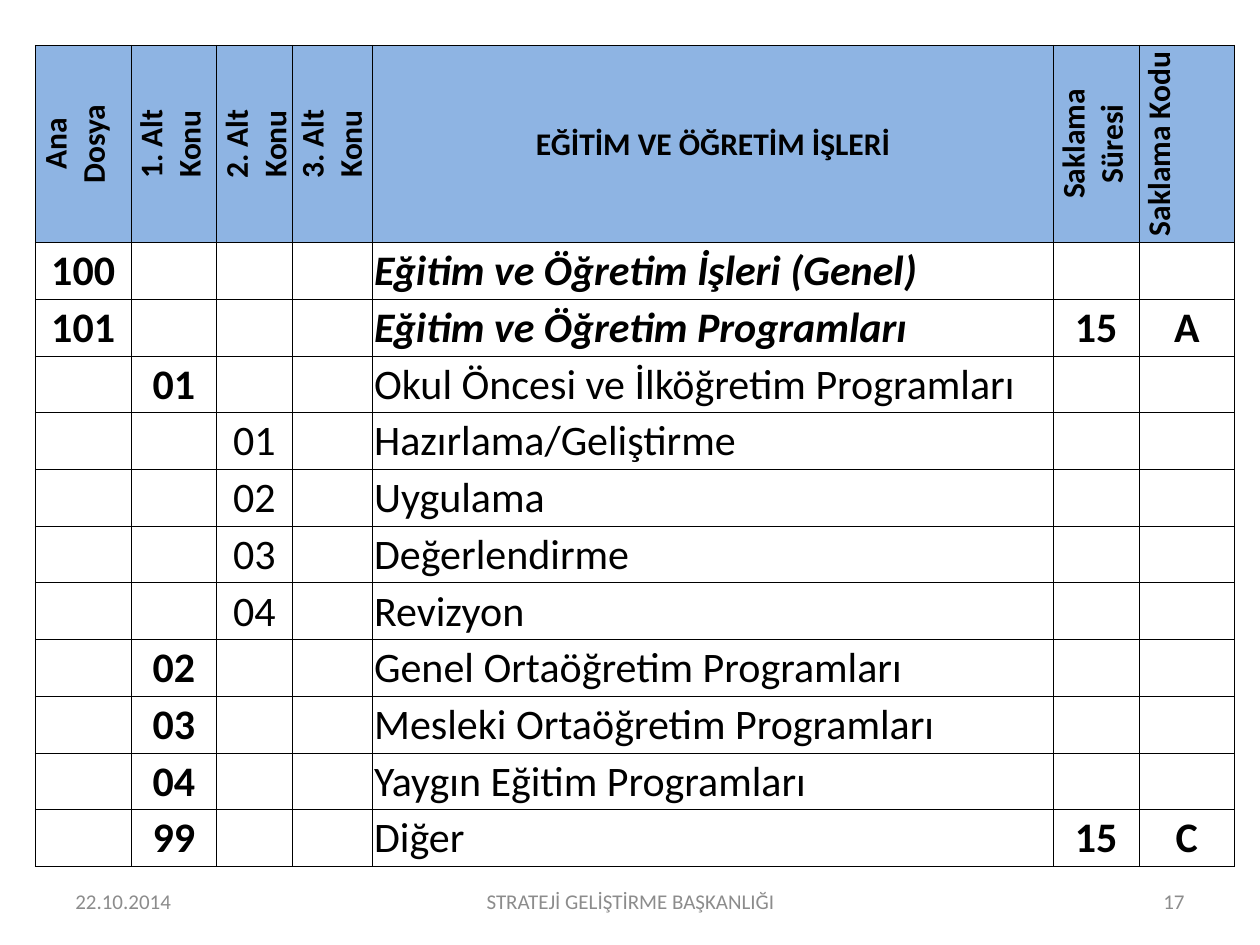
from dataclasses import dataclass

import lxml.etree
import pptx
import pptx.dml.color
import pptx.enum.text
import pptx.oxml.ns
import pptx.table
import pptx.text.text
import pptx.util
from pptx.util import Inches

ALIGN = pptx.enum.text.PP_ALIGN
ANCHOR = pptx.enum.text.MSO_ANCHOR

COLUMN_WIDTHS = [0.76, 0.68, 0.6, 0.64, 5.4, 0.68, 0.76]
HEADER_HEIGHT = 1.5
ROW_HEIGHT = 0.45
TITLE_COLUMN = 4
HEADERS = [
    "Ana\nDosya", "1. Alt\nKonu", "2. Alt\nKonu", "3. Alt\nKonu",
    "EĞİTİM VE ÖĞRETİM İŞLERİ", "Saklama Süresi", "Saklama Kodu",
]


@dataclass
class FileSubject:
    """A line of the filing plan; level is the column that holds its code."""
    level: int
    code: str
    title: str
    retention_years: str = ""
    retention_code: str = ""


@dataclass
class FooterItem:
    text: str
    left: float
    width: float
    align: ALIGN


SUBJECTS = [
    FileSubject(0, "100", "Eğitim ve Öğretim İşleri (Genel)"),
    FileSubject(0, "101", "Eğitim ve Öğretim Programları", "15", "A"),
    FileSubject(1, "01", "Okul Öncesi ve İlköğretim Programları"),
    FileSubject(2, "01", "Hazırlama/Geliştirme"),
    FileSubject(2, "02", "Uygulama"),
    FileSubject(2, "03", "Değerlendirme"),
    FileSubject(2, "04", "Revizyon"),
    FileSubject(1, "02", "Genel Ortaöğretim Programları"),
    FileSubject(1, "03", "Mesleki Ortaöğretim Programları"),
    FileSubject(1, "04", "Yaygın Eğitim Programları"),
    FileSubject(1, "99", "Diğer", "15", "C"),
]
FOOTER = [
    FooterItem("22.10.2014", 0.5, 2.33, ALIGN.LEFT),
    FooterItem("STRATEJİ GELİŞTİRME BAŞKANLIĞI", 3.42, 3.17, ALIGN.CENTER),
    FooterItem("17", 7.17, 2.33, ALIGN.RIGHT),
]


def rgb(color: str) -> pptx.dml.color.RGBColor:
    return pptx.dml.color.RGBColor.from_string(color)


def write_text(frame: pptx.text.text.TextFrame, text: str, *, size: float,
               color: str = "000000", bold: bool = False, italic: bool = False,
               align: ALIGN = ALIGN.CENTER) -> None:
    """Fill the frame with one paragraph per line of text."""
    frame.text = text
    for paragraph in frame.paragraphs:
        paragraph.alignment = align
        for run in paragraph.runs:
            run.font.name = "Calibri"
            run.font.size = pptx.util.Pt(size)
            run.font.bold = bold
            run.font.italic = italic
            run.font.color.rgb = rgb(color)


def draw_borders(cell: pptx.table._Cell, color: str, width: float) -> None:
    properties = cell._tc.get_or_add_tcPr()
    for position, side in enumerate(("lnL", "lnR", "lnT", "lnB")):
        line = lxml.etree.Element(pptx.oxml.ns.qn(f"a:{side}"),
                                  w=str(pptx.util.Pt(width)))
        fill = lxml.etree.SubElement(line, pptx.oxml.ns.qn("a:solidFill"))
        lxml.etree.SubElement(fill, pptx.oxml.ns.qn("a:srgbClr"), val=color)
        properties.insert(position, line)


def format_cell(cell: pptx.table._Cell, fill: str,
                anchor: ANCHOR = ANCHOR.MIDDLE) -> None:
    cell.margin_left = cell.margin_right = cell.margin_top = Inches(0.01)
    cell.margin_bottom = 0
    cell.vertical_anchor = anchor
    cell.fill.solid()
    cell.fill.fore_color.rgb = rgb(fill)
    draw_borders(cell, "000000", 0.5)


def fill_header(table: pptx.table.Table) -> None:
    """Write the headings, turned upwards except for the title column."""
    for column, heading in enumerate(HEADERS):
        cell = table.cell(0, column)
        upright = column == TITLE_COLUMN
        format_cell(cell, "8EB4E3", ANCHOR.MIDDLE if upright else ANCHOR.BOTTOM)
        if not upright:
            cell._tc.get_or_add_tcPr().set("vert", "vert270")
        write_text(cell.text_frame, heading, size=18, bold=True)


def fill_subject(table: pptx.table.Table, row: int, subject: FileSubject) -> None:
    for column in range(len(COLUMN_WIDTHS)):
        format_cell(table.cell(row, column), "FFFFFF")
    main = subject.level == 0
    write_text(table.cell(row, subject.level).text_frame, subject.code,
               size=24, bold=subject.level < 2)
    write_text(table.cell(row, TITLE_COLUMN).text_frame, subject.title,
               size=24, bold=main, italic=main, align=ALIGN.LEFT)
    retention = (subject.retention_years, subject.retention_code)
    for column, text in enumerate(retention, TITLE_COLUMN + 1):
        if text:
            write_text(table.cell(row, column).text_frame, text, size=24, bold=True)


def add_filing_plan(slide: pptx.slide.Slide) -> None:
    height = HEADER_HEIGHT + ROW_HEIGHT * len(SUBJECTS)
    shape = slide.shapes.add_table(
        len(SUBJECTS) + 1, len(COLUMN_WIDTHS), Inches(0.28), Inches(0.36),
        Inches(sum(COLUMN_WIDTHS)), Inches(height))
    table = shape.table
    table.first_row = table.horz_banding = False
    for column, width in zip(table.columns, COLUMN_WIDTHS):
        column.width = Inches(width)
    for row in table.rows:
        row.height = Inches(ROW_HEIGHT)
    table.rows[0].height = Inches(HEADER_HEIGHT)
    fill_header(table)
    for row, subject in enumerate(SUBJECTS, 1):
        fill_subject(table, row, subject)


def add_footer_item(slide: pptx.slide.Slide, item: FooterItem) -> None:
    shape = slide.shapes.add_textbox(
        Inches(item.left), Inches(6.95), Inches(item.width), Inches(0.4))
    frame = shape.text_frame
    frame.word_wrap = True
    frame.vertical_anchor = ANCHOR.MIDDLE
    write_text(frame, item.text, size=12, color="8C8C8C", align=item.align)


def main() -> None:
    presentation = pptx.Presentation()
    presentation.slide_width = Inches(10)
    presentation.slide_height = Inches(7.5)
    slide = presentation.slides.add_slide(presentation.slide_layouts[6])
    for item in FOOTER:
        add_footer_item(slide, item)
    add_filing_plan(slide)
    presentation.save("out.pptx")


if __name__ == "__main__":
    main()
